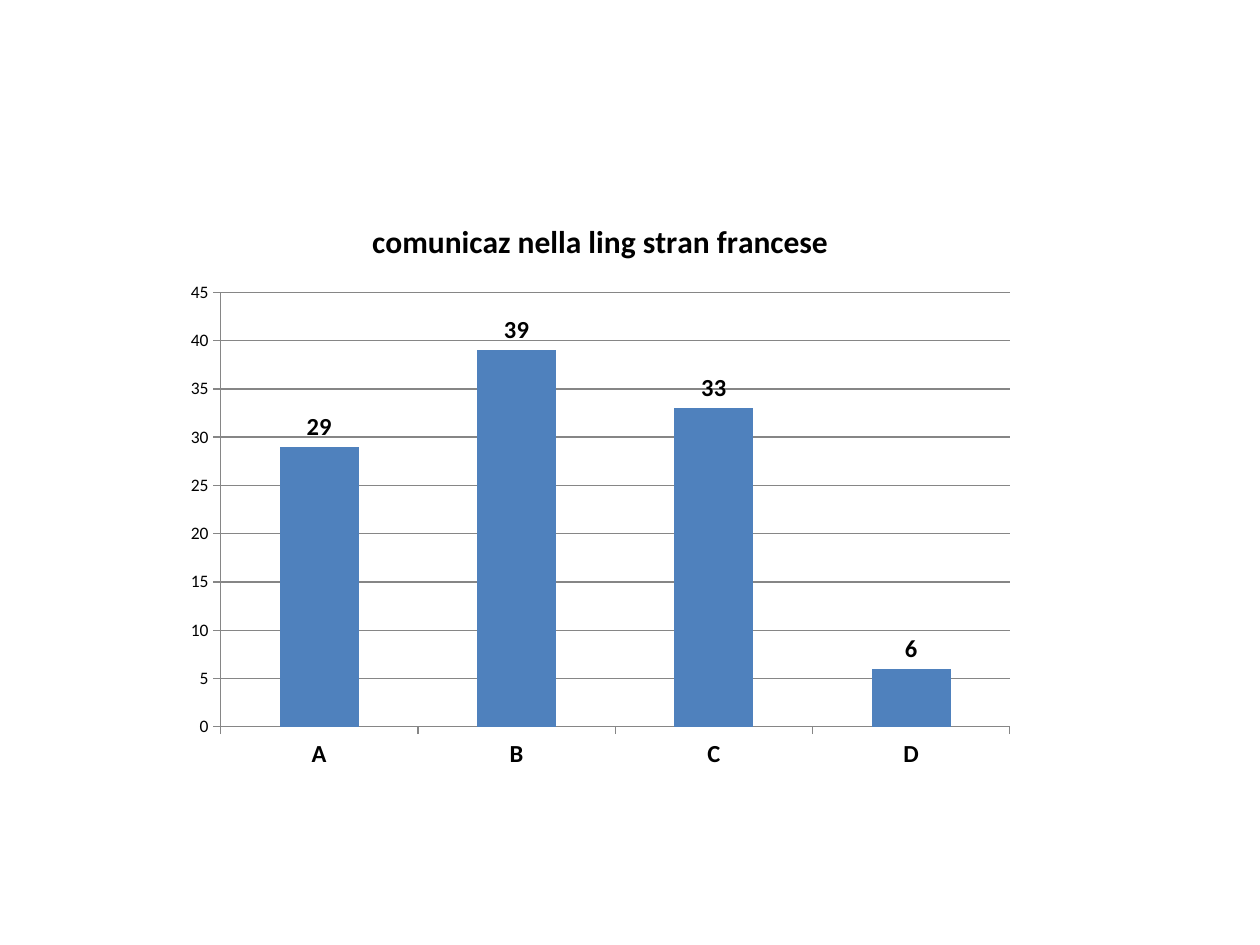
from pptx import Presentation
from pptx.chart.data import CategoryChartData
from pptx.dml.color import RGBColor
from pptx.enum.chart import XL_CHART_TYPE as ChartType, XL_LABEL_POSITION as LabelPosition
from pptx.enum.chart import XL_TICK_MARK as TickMark
from pptx.util import Pt


def paint(color, value):
    color.rgb = RGBColor.from_string(value)


deck = Presentation()
deck.slide_width, deck.slide_height = Pt(720), Pt(540)
page = deck.slides.add_slide(deck.slide_layouts[6])

title = "comunicaz nella ling stran francese"
data = CategoryChartData(number_format="General")
data.categories = ["A", "B", "C", "D"]
data.add_series(title, [29, 39, 33, 6])
frame = page.shapes.add_chart(
    ChartType.COLUMN_CLUSTERED, Pt(99.36), Pt(111.6), Pt(487.44), Pt(334.8), data
)
chart = frame.chart
chart.has_legend = False
chart.has_title = True
chart.chart_title.include_in_layout = False
para = chart.chart_title.text_frame.paragraphs[0]
span = para.add_run()
span.text = title

plot = chart.plots[0]
plot.gap_width = 150
plot.vary_by_categories = False
plot.has_data_labels = True
labels = plot.data_labels
labels.show_value = True
labels.position = LabelPosition.OUTSIDE_END
bars = plot.series[0].format.fill
bars.solid()
paint(bars.fore_color, "4F81BD")

values, categories = chart.value_axis, chart.category_axis
values.minimum_scale, values.maximum_scale, values.major_unit = 0, 45, 5
values.has_major_gridlines = True
for axis in (values, categories):
    axis.major_tick_mark = TickMark.OUTSIDE
    axis.minor_tick_mark = TickMark.NONE
for line in (values.format.line, categories.format.line, values.major_gridlines.format.line):
    line.width = Pt(0.75)
    paint(line.color, "868686")

formats = [
    (chart.font, {"size": Pt(10), "bold": False}),
    (span.font, {"size": Pt(18), "bold": True}),
    (labels.font, {"size": Pt(14), "bold": True}),
    (categories.tick_labels.font, {"size": Pt(14), "bold": True}),
    (values.tick_labels.font, {"size": Pt(10), "bold": False}),
]
for font, settings in formats:
    for name, value in {"name": "Calibri", **settings}.items():
        setattr(font, name, value)
    paint(font.color, "000000")

deck.save("out.pptx")
